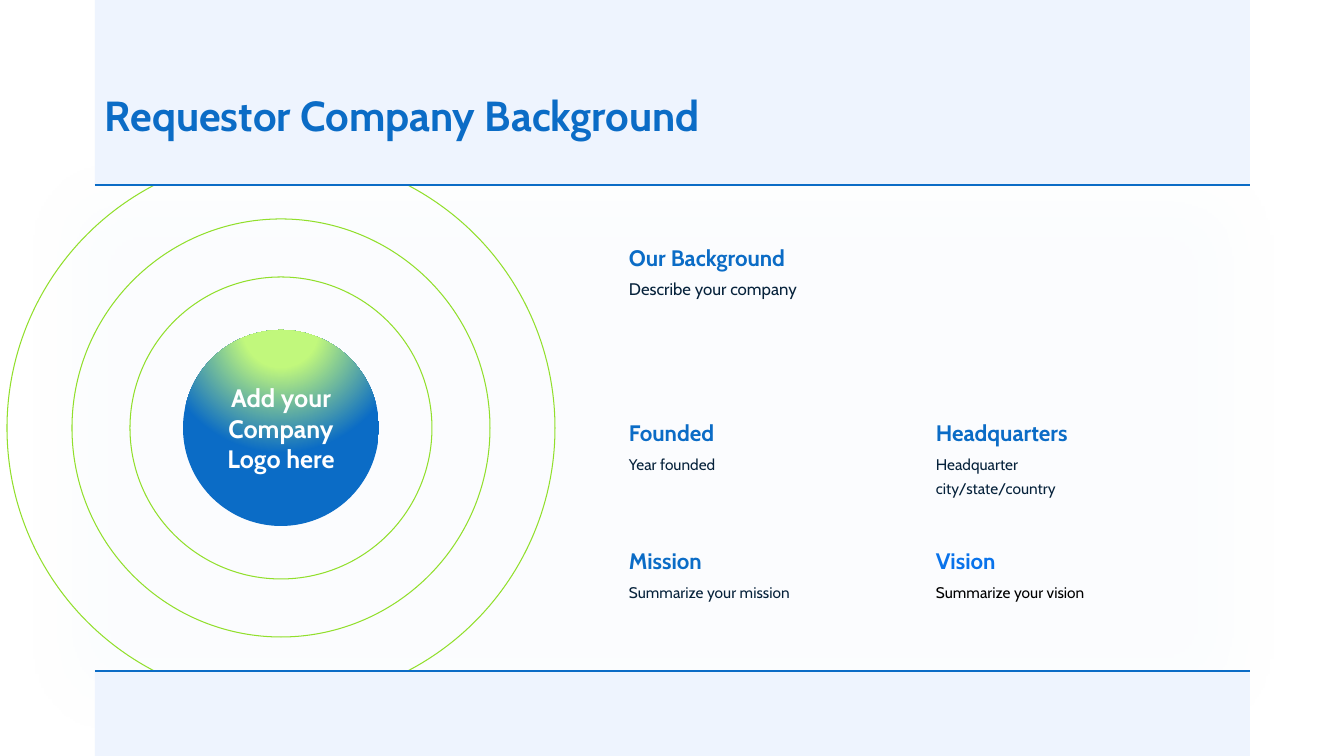
from lxml import etree
from pptx import Presentation
from pptx import util as u
from pptx.dml.color import RGBColor
from pptx.enum import shapes, text
from pptx.oxml import ns, parse_xml

BLUE = RGBColor(0x0B, 0x6C, 0xC6)
BRIGHT = RGBColor(0x09, 0x73, 0xEB)
GREEN = RGBColor(0x91, 0xDF, 0x2B)
LIME = RGBColor(0xC1, 0xF8, 0x7C)
PALE = RGBColor(0xEE, 0xF4, 0xFE)
GLOW = RGBColor(0x37, 0x8F, 0xF2)
NAVY = RGBColor(0x06, 0x22, 0x3B)
BLACK = RGBColor(0x00, 0x00, 0x00)
WHITE = RGBColor(0xFF, 0xFF, 0xFF)

SCALE = 914400 / 100.8
LEFT, WIDE = 95, 1155
TOP, BASE, END = 185, 671, 756
MID = (281, 428)
COLS = (619, 926)
ROWS = (247, 422, 550)


def px(*vals):
    return [round(v * SCALE) for v in vals]


def fade(fill, share):
    """Set the opacity of a solid fill element, in percent."""
    color = fill.find(ns.qn("a:srgbClr"))
    etree.SubElement(color, ns.qn("a:alpha")).set("val", str(share * 1000))


class Deck:
    def __init__(self, font):
        self.font = font
        self.prs = Presentation()
        self.prs.slide_width, self.prs.slide_height = px(1344, END)
        self.slide = self.prs.slides.add_slide(self.prs.slide_layouts[6])

    def shape(self, kind, box, fill=None, line=None, width=0.75):
        item = self.slide.shapes.add_shape(kind, *px(*box))
        item.shadow.inherit = False
        if fill is None:
            item.fill.background()
        else:
            item.fill.solid()
            item.fill.fore_color.rgb = fill
        if line is None:
            item.line.fill.background()
        else:
            item.line.color.rgb = line
            item.line.width = u.Pt(width)
        return item

    def rect(self, box, **style):
        return self.shape(shapes.MSO_SHAPE.RECTANGLE, box, **style)

    def disc(self, mid, rad, **style):
        x, y = mid
        box = (x - rad, y - rad, 2 * rad, 2 * rad)
        return self.shape(shapes.MSO_SHAPE.OVAL, box, **style)

    def card(self, box):
        """Draw a translucent white panel with a soft blue shadow."""
        props = self.rect(box, fill=WHITE, line=WHITE, width=1.5)._element.spPr
        fade(props.find(ns.qn("a:solidFill")), 20)
        fade(props.find(ns.qn("a:ln")).find(ns.qn("a:solidFill")), 15)
        props.find(ns.qn("a:effectLst")).append(parse_xml(
            f'<a:outerShdw {ns.nsdecls("a")} blurRad="{u.Pt(50)}" '
            f'dist="{u.Pt(20)}" dir="8100000" algn="tr" rotWithShape="0">'
            f'<a:srgbClr val="{GLOW}"><a:alpha val="10000"/></a:srgbClr>'
            '</a:outerShdw>'))

    def badge(self, mid, rad, words):
        """Draw a disc with a radial gradient centred above it."""
        item = self.disc(mid, rad, fill=BLUE)
        solid = item._element.spPr.find(ns.qn("a:solidFill"))
        solid.getparent().replace(solid, parse_xml(
            f'<a:gradFill {ns.nsdecls("a")} rotWithShape="1"><a:gsLst>'
            f'<a:gs pos="27000"><a:srgbClr val="{LIME}"/></a:gs>'
            f'<a:gs pos="89000"><a:srgbClr val="{BLUE}"/></a:gs></a:gsLst>'
            '<a:path path="circle"><a:fillToRect l="50000" t="-80000" '
            'r="50000" b="180000"/></a:path></a:gradFill>'))
        frame = item.text_frame
        frame.word_wrap = True
        frame.margin_left = frame.margin_right = 0
        frame.vertical_anchor = text.MSO_ANCHOR.MIDDLE
        para = frame.paragraphs[0]
        para.alignment = text.PP_ALIGN.CENTER
        self.run(para, words, 18, WHITE, True)

    def rule(self, x, y, wide):
        item = self.slide.shapes.add_connector(
            shapes.MSO_CONNECTOR.STRAIGHT, *px(x, y, x + wide, y))
        item.line.color.rgb = BLUE
        item.line.width = u.Pt(1)
        etree.SubElement(item._element.spPr, ns.qn("a:effectLst"))

    def run(self, para, words, size, color, bold=False):
        run = para.add_run()
        run.text = words
        run.font.name = self.font
        run.font.size = u.Pt(size)
        run.font.bold = bold
        run.font.color.rgb = color

    def frame(self, box):
        frame = self.slide.shapes.add_textbox(*px(*box)).text_frame
        frame.word_wrap = True
        frame.auto_size = text.MSO_AUTO_SIZE.SHAPE_TO_FIT_TEXT
        return frame

    def title(self, box, words):
        self.run(self.frame(box).paragraphs[0], words, 30, BLUE, True)

    def fact(self, box, head, body, size=11, tint=BLUE, ink=NAVY):
        frame = self.frame(box)
        frame.margin_top = 0
        first = frame.paragraphs[0]
        second = frame.add_paragraph()
        for para in (first, second):
            para.line_spacing = u.Pt(17)
            para.space_after = u.Pt(3)
        self.run(first, head, 16, tint, True)
        self.run(second, body, size, ink)


def main():
    deck = Deck("Cabin")
    deck.card((LEFT, TOP, WIDE, BASE - TOP))
    deck.badge(MID, 98, "Add your Company Logo here")
    for rad in (151, 209, 274):
        deck.disc(MID, rad, line=GREEN)
    for y, high in ((0, TOP), (BASE, END - BASE)):
        deck.rect((LEFT, y, WIDE, high), fill=PALE)
    deck.title((LEFT, 85, 792, 61), "Requestor Company Background")
    for y in (BASE, TOP):
        deck.rule(LEFT, y, WIDE)

    near, far = COLS
    about, facts, goals = ROWS
    deck.fact((near, about, 440, 55), "Our Background",
              "Describe your company", size=12)
    deck.fact((near, facts, 138, 55), "Founded", "Year founded")
    deck.fact((near, goals, 243, 55), "Mission", "Summarize your mission")
    deck.fact((far, facts, 185, 79), "Headquarters",
              "Headquarter city/state/country")
    deck.fact((far, goals, 268, 55), "Vision", "Summarize your vision",
              tint=BRIGHT, ink=BLACK)
    deck.prs.save("out.pptx")


if __name__ == "__main__":
    main()
